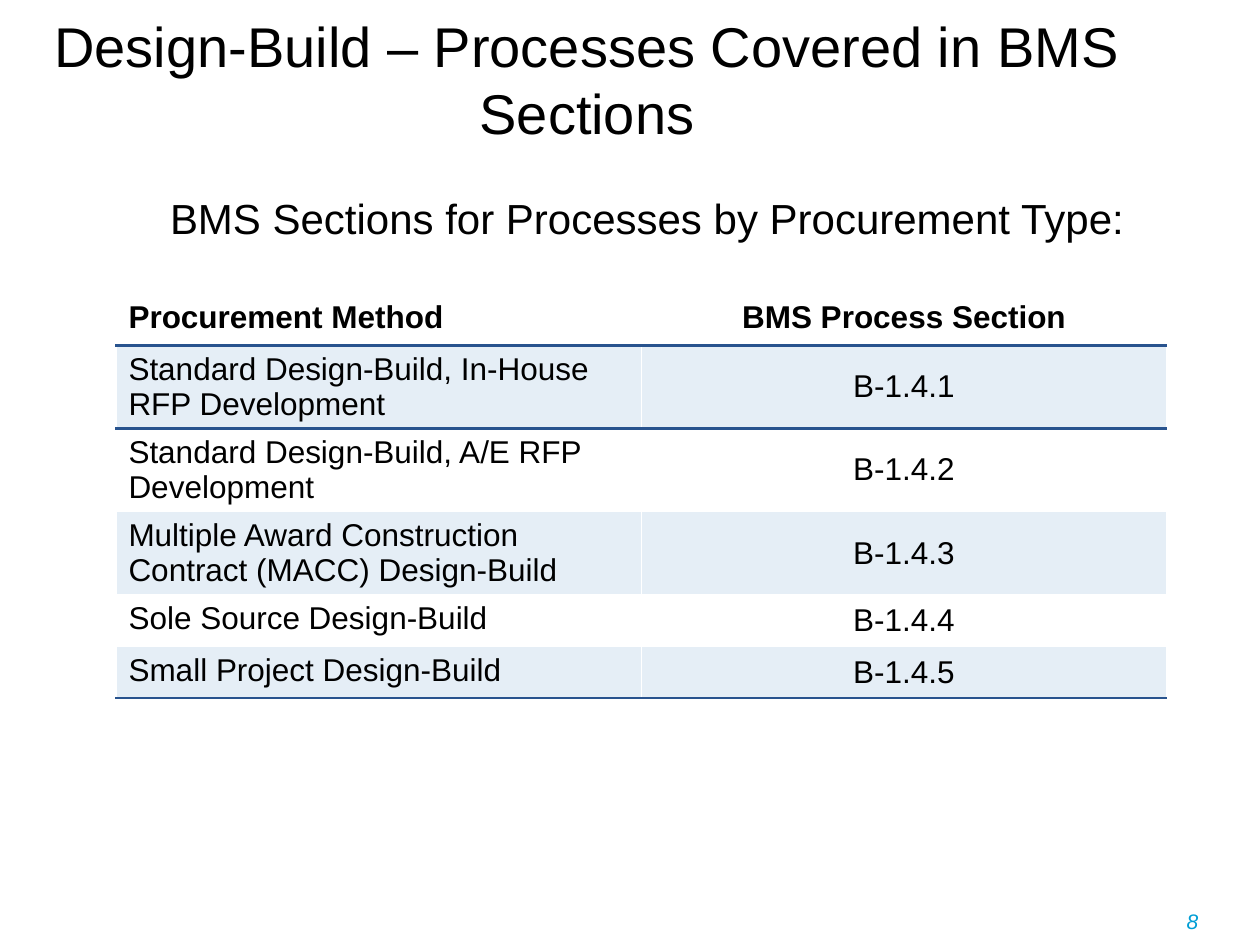
from lxml import etree
from pptx import Presentation
from pptx.dml.color import RGBColor
from pptx.enum import text
from pptx.oxml import ns
from pptx.util import Inches, Pt

TITLE = "Design-Build – Processes Covered in BMS Sections"
LEAD = "BMS Sections for Processes by Procurement Type:"
PAGE = "8"
ROWS = [
    ("Procurement Method", "BMS Process Section"),
    ("Standard Design-Build, In-House RFP Development", "B-1.4.1"),
    ("Standard Design-Build, A/E RFP Development", "B-1.4.2"),
    ("Multiple Award Construction Contract (MACC) Design-Build", "B-1.4.3"),
    ("Sole Source Design-Build", "B-1.4.4"),
    ("Small Project Design-Build", "B-1.4.5"),
]
HEIGHTS = [0.41, 0.66, 0.66, 0.66, 0.41, 0.41]
RULES = {0: 2.25, 1: 2.25, 5: 1.5}
COLORS = {"ink": "000000", "page": "009ED5", "rule": "28538E",
          "band": "E5EEF6", "white": "FFFFFF"}
MID = text.MSO_ANCHOR.MIDDLE
TOP = text.MSO_ANCHOR.TOP
LEFT = text.PP_ALIGN.LEFT
CENTER = text.PP_ALIGN.CENTER


def place(shape, *box):
    shape.left, shape.top, shape.width, shape.height = map(Inches, box)


def write(frame, words, size, align=CENTER, color="ink", bold=False, slant=False):
    frame.text = words
    par = frame.paragraphs[0]
    par.alignment = align
    font = par.runs[0].font
    font.name, font.size = "Arial", Pt(size)
    font.bold, font.italic = bold, slant
    font.color.rgb = RGBColor.from_string(COLORS[color])
    return par


def edge(cell, side, color, width):
    props = cell._tc.get_or_add_tcPr()
    line = etree.SubElement(props, ns.qn("a:ln" + side), w=str(Pt(width)))
    fill = etree.SubElement(line, ns.qn("a:solidFill"))
    etree.SubElement(fill, ns.qn("a:srgbClr"), val=COLORS[color])


def border(cell, row):
    for side in "LRTB":
        rule = RULES.get({"T": row - 1, "B": row}.get(side))
        edge(cell, side, "rule" if rule else "white", rule or 1)


def fill_table(table):
    for col in table.columns:
        col.width = Inches(4.17)
    for r, (row, height) in enumerate(zip(ROWS, HEIGHTS)):
        table.rows[r].height = Inches(height)
        for c, words in enumerate(row):
            cell = table.cell(r, c)
            border(cell, r)
            cell.fill.solid()
            shade = COLORS["band" if r % 2 else "white"]
            cell.fill.fore_color.rgb = RGBColor.from_string(shade)
            cell.vertical_anchor = MID if r and c else TOP
            write(cell.text_frame, words, 18, CENTER if c else LEFT, bold=r == 0)


def main():
    deck = Presentation()
    deck.slide_width, deck.slide_height = Inches(10), Inches(7.5)
    slide = deck.slides.add_slide(deck.slide_layouts[1])

    title, body = slide.placeholders
    place(title, 0.26, 0.17, 8.8, 0.91)
    write(title.text_frame, TITLE, 32)
    title.text_frame.vertical_anchor = MID

    place(body, 0.71, 1.48, 8.85, 5.26)
    lead = write(body.text_frame, LEAD, 24)
    lead.space_before, lead.space_after = Pt(0), Pt(12)
    props = lead._p.get_or_add_pPr()
    props.set("marL", "0")
    props.set("indent", "0")
    etree.SubElement(props, ns.qn("a:buNone"))

    for shape in (title, body):
        shape.text_frame.auto_size = text.MSO_AUTO_SIZE.NONE

    grid = slide.shapes.add_table(len(ROWS), 2, Inches(0.92), Inches(2.33),
                                  Inches(8.34), Inches(sum(HEIGHTS)))
    fill_table(grid.table)

    page = slide.shapes.add_textbox(Inches(8.93), Inches(7.16),
                                    Inches(1.07), Inches(0.34))
    page.text_frame.word_wrap = True
    write(page.text_frame, PAGE, 12, color="page", slant=True)
    deck.save("out.pptx")


if __name__ == "__main__":
    main()
